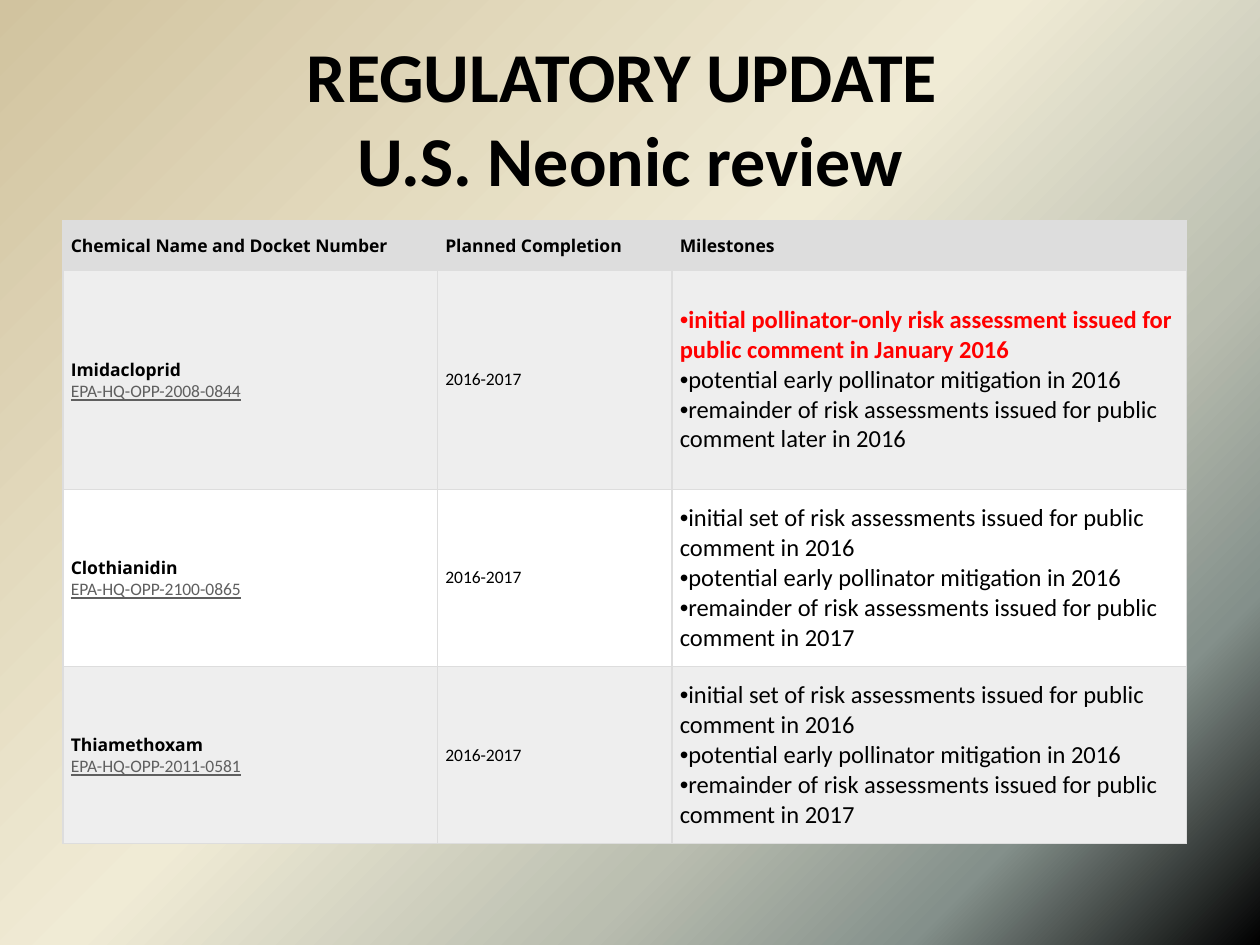
from lxml import etree
from pptx import Presentation
from pptx.dml.color import RGBColor
from pptx.enum.text import MSO_ANCHOR, PP_ALIGN
from pptx.oxml import parse_xml
from pptx.oxml.ns import nsdecls, qn
from pptx.util import Pt

MIDDLE = MSO_ANCHOR.MIDDLE
CENTER = PP_ALIGN.CENTER


def color(value):
    return RGBColor.from_string(value)


def style(font, size, name, fill="000000", bold=False):
    font.size = Pt(size)
    font.name = name
    font.bold = bold
    font.color.rgb = color(fill)


presentation = Presentation()
presentation.slide_width = Pt(720)
presentation.slide_height = Pt(540)
slide = presentation.slides.add_slide(presentation.slide_layouts[5])

background = slide.background.fill
background.gradient()
gradient = background._fill._gradFill
for child in list(gradient):
    gradient.remove(child)
stops = etree.SubElement(gradient, qn("a:gsLst"))
for position, value in [(0, "000000"), (16, "84908B"), (31, "BABEB0"),
                        (54, "F0EBD5"), (100, "D1C39F")]:
    stop = etree.SubElement(stops, qn("a:gs"), pos=str(position * 1000))
    etree.SubElement(stop, qn("a:srgbClr"), val=value)
etree.SubElement(gradient, qn("a:lin"), ang=str(225 * 60000), scaled="0")

title = slide.shapes.title
title.left, title.top, title.width, title.height = Pt(36), Pt(21.6), Pt(648), Pt(90)
title.text_frame.text = "REGULATORY UPDATE \vU.S. Neonic review"
title.text_frame.vertical_anchor = MIDDLE
paragraph = title.text_frame.paragraphs[0]
paragraph.alignment = CENTER
style(paragraph.font, 40, "Calibri", bold=True)

later_milestones = [
    "initial set of risk assessments issued for public comment in 2016",
    "potential early pollinator mitigation in 2016",
    "remainder of risk assessments issued for public comment in 2017",
]
headers = ["Chemical Name and Docket Number", "Planned Completion", "Milestones"]
chemicals = [
    ("Imidacloprid", "EPA-HQ-OPP-2008-0844", "2016-2017", [
        "initial pollinator-only risk assessment issued for public comment in January 2016",
        "potential early pollinator mitigation in 2016",
        "remainder of risk assessments issued for public comment later in 2016",
    ]),
    ("Clothianidin", "EPA-HQ-OPP-2100-0865", "2016-2017", later_milestones),
    ("Thiamethoxam", "EPA-HQ-OPP-2011-0581", "2016-2017", later_milestones),
]
column_widths = [214, 134, 294]
row_heights = [28.5, 125.2, 101.2, 101.2]
row_fills = ["DDDDDD", "EEEEEE", "FFFFFF", "EEEEEE"]

table = slide.shapes.add_table(
    len(row_heights), len(column_widths), Pt(36), Pt(126),
    Pt(sum(column_widths)), Pt(sum(row_heights))).table
for column, width in zip(table.columns, column_widths):
    column.width = Pt(width)

for row, height, fill in zip(table.rows, row_heights, row_fills):
    row.height = Pt(height)
    for cell in row.cells:
        cell.fill.solid()
        cell.fill.fore_color.rgb = color(fill)
        cell.vertical_anchor = MIDDLE
        cell.margin_left = cell.margin_right = Pt(4.5)
        cell.margin_top = cell.margin_bottom = Pt(2.25)
        properties = cell._tc.get_or_add_tcPr()
        for index, side in enumerate(["lnL", "lnR", "lnT", "lnB"]):
            properties.insert(index, parse_xml(
                f'<a:{side} {nsdecls("a")} w="{Pt(0.75)}"><a:solidFill>'
                f'<a:srgbClr val="DDDDDD"/></a:solidFill></a:{side}>'))

for column_index, header in enumerate(headers):
    cell = table.cell(0, column_index)
    cell.text = header
    style(cell.text_frame.paragraphs[0].font, 10, "Open Sans", bold=True)

for row_index, (name, docket, completion, milestones) in enumerate(chemicals, 1):
    name_cell, completion_cell, milestone_cell = table.rows[row_index].cells

    paragraph = name_cell.text_frame.paragraphs[0]
    run = paragraph.add_run()
    run.text = name
    style(run.font, 10, "Open Sans", bold=True)
    paragraph.add_line_break()
    run = paragraph.add_run()
    run.text = docket
    style(run.font, 10, "Calibri", "5F5F5F")
    run.font.underline = True

    completion_cell.text = completion
    style(completion_cell.text_frame.paragraphs[0].font, 10, "Calibri")

    milestone_cell.text = "\n".join(milestones)
    for index, paragraph in enumerate(milestone_cell.text_frame.paragraphs):
        paragraph_properties = paragraph._p.get_or_add_pPr()
        paragraph_properties.set("marL", "0")
        paragraph_properties.set("indent", "0")
        etree.SubElement(paragraph_properties, qn("a:buFont"), typeface="Arial")
        etree.SubElement(paragraph_properties, qn("a:buChar"), char="•")
        urgent = row_index == 1 and index == 0
        style(paragraph.font, 14, "Calibri", "FF0000" if urgent else "000000", urgent)

presentation.save("out.pptx")
